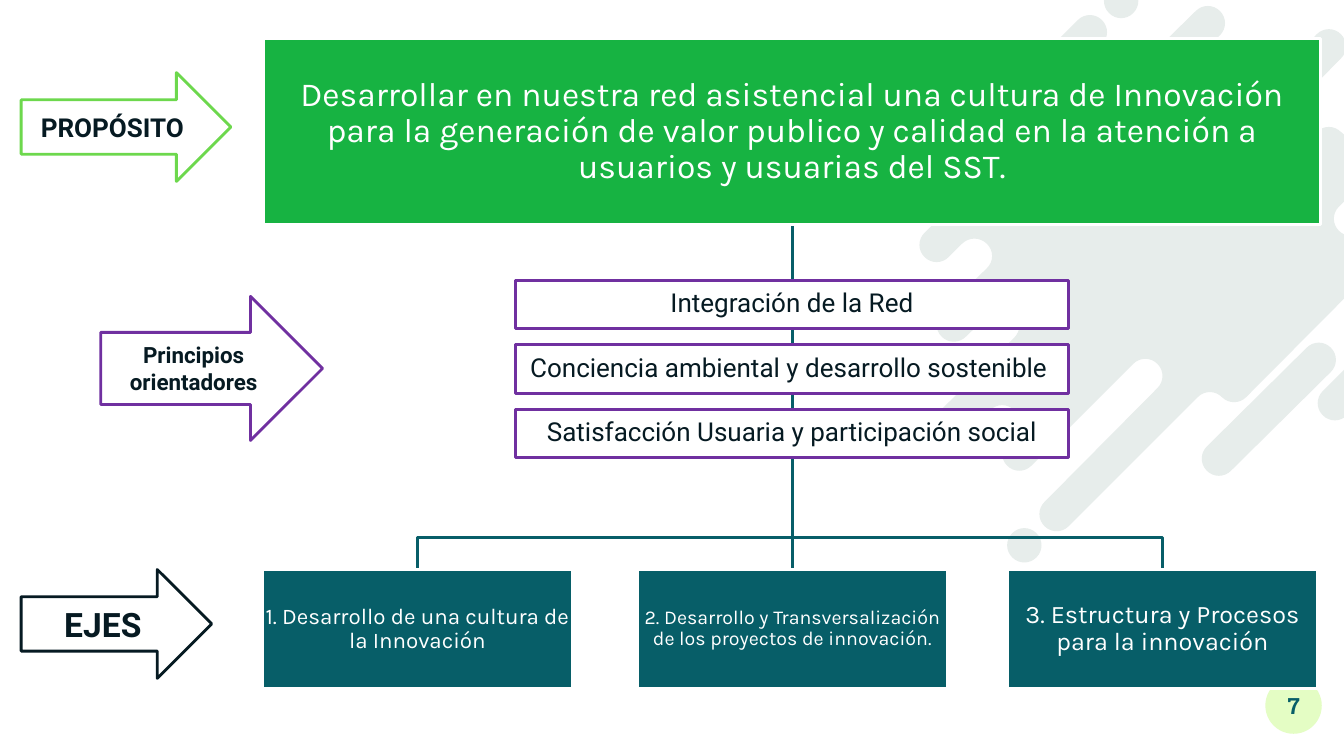
"""Build the slide that links purpose, guiding principles and axes of innovation."""
from dataclasses import dataclass

from lxml.etree import SubElement
from pptx import Presentation
from pptx.dml.color import RGBColor
from pptx.enum.shapes import MSO_SHAPE
from pptx.enum.text import MSO_ANCHOR, PP_ALIGN
from pptx.oxml.ns import qn
from pptx.util import Inches, Pt


@dataclass(frozen=True)
class Theme:
    white: str = "FFFFFF"
    ink: str = "061A22"
    teal: str = "075E68"
    green: str = "17B342"
    lime: str = "6DD84D"
    purple: str = "7030A0"
    badge: str = "E4FDC4"
    mist: str = "E7EDEB"
    display: str = "Karla"
    body: str = "Roboto"
    number: str = "Roboto Slab"
    large: float = 24
    medium: float = 18.6
    small: float = 16
    line: float = 2
    frame: float = 2.25


THEME = Theme()
WIDTH, HEIGHT = 13.33, 7.5

PURPOSE = ("Desarrollar en nuestra red asistencial una cultura de Innovación para la generación "
           "de valor publico y calidad en la atención a usuarios y usuarias del SST.")
PRINCIPLES = [
    "Integración de la Red",
    "Conciencia ambiental y desarrollo sostenible ",
    "Satisfacción Usuaria y participación social",
]
AXES = [
    ("1. Desarrollo de una cultura de la Innovación", 16, 4.14),
    ("2. Desarrollo y Transversalización de los proyectos de innovación.", 14, 7.86),
    ("3. Estructura y Procesos para la innovación", 18, 11.53),
]
ARROWS = [
    ("PROPÓSITO", THEME.medium, THEME.lime, (0.21, 0.72, 2.08, 1.08)),
    ("EJES", THEME.large, THEME.ink, (0.21, 5.65, 1.89, 1.08)),
    ("Principios orientadores", THEME.small, THEME.purple, (1, 2.94, 2.2, 1.43)),
]
PAGE_NUMBER = "7"

TRUNK = AXES[1][2]
PURPOSE_BOX = (2.61, 0.38, 10.49, 1.85)
PURPOSE_BOTTOM = 2.23
PRINCIPLE_LEFT, PRINCIPLE_TOP, PRINCIPLE_STEP = 5.11, 2.78, 0.64
PRINCIPLE_WIDTH, PRINCIPLE_HEIGHT = 5.49, 0.48
BRANCH, AXIS_TOP = 5.33, 5.65
AXIS_WIDTH, AXIS_HEIGHT = 3.07, 1.18
BADGE_BOX = (12.55, 6.72, 0.56, 0.56)

HALF_CAP = 0.12
ARC_HANDLE = 0.28
STREAKS = [
    (13.24, 4.0, 13.86, 3.38), (14.19, 0.9, 14.5, 0.59), (12.09, 4.55, 13.08, 3.57),
    (10.16, 5.41, 10.16, 5.41), (14.2, 3.03, 14.2, 3.03), (8.97, 3.71, 9.1, 3.58),
    (9.52, 1.61, 10.81, 0.32), (11.12, 0.01, 11.12, 0.01),
]
SPLASH = [
    (9.41, 2.55), (9.54, 2.42), (9.79, 2.42), (9.79, 2.66), (9.34, 3.1), (9.34, 3.34),
    (9.58, 3.34), (9.82, 3.11), (10.06, 3.11), (10.06, 3.35), (9.33, 4.07), (9.33, 4.31),
    (9.58, 4.31), (9.82, 4.07), (10.06, 4.07), (10.06, 4.31), (9.99, 4.38), (9.99, 4.62),
    (10.23, 4.62), (11.24, 3.61), (11.48, 3.61), (11.48, 3.85), (10.36, 4.98), (10.36, 5.22),
    (10.6, 5.22), (11.88, 3.94), (12.12, 3.94), (12.36, 3.94), (14.03, 2.26), (14.03, 2.02),
    (13.79, 2.02), (13.52, 2.29), (13.28, 2.29), (13.28, 2.05), (13.93, 1.4), (13.93, 1.16),
    (13.69, 1.16), (13.54, 1.31), (13.3, 1.31), (13.06, 1.31), (12.77, 1.6), (12.53, 1.6),
    (12.53, 1.36), (13.3, 0.58), (13.3, 0.34), (13.06, 0.34), (12.62, 0.79), (12.38, 0.79),
    (12.14, 0.79), (11.91, 1.02), (11.67, 1.02), (11.67, 0.78), (12.1, 0.35), (12.1, 0.11),
    (11.86, 0.11), (11.33, 0.63), (11.09, 0.63), (10.85, 0.63), (9.17, 2.31), (9.17, 2.55),
]


def color(value):
    return RGBColor.from_string(value)


def paint(shape, fill=None, line=None, width=THEME.line):
    shape.shadow.inherit = False
    if fill:
        shape.fill.solid()
        shape.fill.fore_color.rgb = color(fill)
    else:
        shape.fill.background()
    if line:
        shape.line.color.rgb = color(line)
        shape.line.width = Pt(width)
    else:
        shape.line.fill.background()


def write(shape, text, size, font, ink, bold=False, inset=0.01, spacing=0.9):
    frame = shape.text_frame
    frame.word_wrap = True
    frame.vertical_anchor = MSO_ANCHOR.MIDDLE
    frame.margin_left = frame.margin_right = Inches(inset)
    frame.margin_top = frame.margin_bottom = Inches(inset)
    para = frame.paragraphs[0]
    para.alignment = PP_ALIGN.CENTER
    para.line_spacing = spacing
    span = para.add_run()
    span.text = text
    span.font.size = Pt(size)
    span.font.name = font
    span.font.bold = bold
    span.font.color.rgb = color(ink)


def add_box(page, kind, place):
    return page.shapes.add_shape(kind, *(Inches(value) for value in place))


def add_outline(page, outlines, close):
    outlines = [[(Inches(x), Inches(y)) for x, y in outline] for outline in outlines]
    builder = page.shapes.build_freeform(*outlines[0][0])
    for index, outline in enumerate(outlines):
        if index:
            builder.move_to(*outline[0])
        builder.add_line_segments(outline[1:], close=close)
    return builder.convert_to_shape()


def streak_corners(left, low, right, high):
    h = HALF_CAP
    return [(right - h, high - h), (left - h, low - h), (left - h, low + h),
            (left + h, low + h), (right + h, high + h), (right + h, high - h)]


def round_corners(shape):
    """Turn every level or upright step into a quarter arc that follows the step before."""
    x = y = 0
    toward = [-1, 1]
    for step in list(shape._element.iter(qn("a:moveTo"), qn("a:lnTo"))):
        end = step[0]
        next_x, next_y = int(end.get("x")), int(end.get("y"))
        dx, dy = next_x - x, next_y - y
        chord = max(abs(dx), abs(dy))
        if step.tag == qn("a:moveTo"):
            toward = [-1, 1]
        elif min(abs(dx), abs(dy)) > Inches(0.03):
            toward = [1 if dx > 0 else -1, 1 if dy > 0 else -1]
        elif chord > Inches(0.03):
            bulge = 1 if abs(dx) > abs(dy) else 0
            step.remove(end)
            arc = SubElement(step.getparent(), qn("a:cubicBezTo"))
            step.getparent().replace(step, arc)
            for share in (ARC_HANDLE, 1 - ARC_HANDLE):
                handle = [x + dx * share, y + dy * share]
                handle[bulge] += toward[bulge] * chord * ARC_HANDLE
                SubElement(arc, qn("a:pt"), x=str(round(handle[0])), y=str(round(handle[1])))
            arc.append(end)
            toward[bulge] *= -1
        x, y = next_x, next_y


def main():
    deck = Presentation()
    deck.slide_width, deck.slide_height = Inches(WIDTH), Inches(HEIGHT)
    page = deck.slides.add_slide(deck.slide_layouts[6])

    badge = add_box(page, MSO_SHAPE.OVAL, BADGE_BOX)
    paint(badge, THEME.badge)
    write(badge, PAGE_NUMBER, THEME.small, THEME.number, THEME.teal, True, 0, 1)

    contours = [SPLASH] + [streak_corners(*streak) for streak in STREAKS]
    splash = add_outline(page, [contour + contour[:1] for contour in contours], True)
    round_corners(splash)
    paint(splash, THEME.mist)

    for _, _, center in reversed(AXES):
        bend = [] if center == TRUNK else [(TRUNK, BRANCH), (center, BRANCH)]
        branch = add_outline(page, [[(TRUNK, PURPOSE_BOTTOM), *bend, (center, AXIS_TOP)]], False)
        paint(branch, line=THEME.teal)

    purpose = add_box(page, MSO_SHAPE.RECTANGLE, PURPOSE_BOX)
    paint(purpose, THEME.green, THEME.white)
    write(purpose, PURPOSE, THEME.large, THEME.display, THEME.white, inset=0.02)

    for text, size, center in AXES:
        axis = add_box(page, MSO_SHAPE.RECTANGLE,
                       (center - AXIS_WIDTH / 2, AXIS_TOP, AXIS_WIDTH, AXIS_HEIGHT))
        paint(axis, THEME.teal, THEME.white)
        write(axis, text, size, THEME.display, THEME.white)

    for row, text in enumerate(PRINCIPLES):
        principle = add_box(page, MSO_SHAPE.RECTANGLE,
                            (PRINCIPLE_LEFT, PRINCIPLE_TOP + row * PRINCIPLE_STEP,
                             PRINCIPLE_WIDTH, PRINCIPLE_HEIGHT))
        paint(principle, THEME.white, THEME.purple, THEME.frame)
        write(principle, text, THEME.medium, THEME.body, THEME.ink)

    for text, size, line, place in ARROWS:
        arrow = add_box(page, MSO_SHAPE.RIGHT_ARROW, place)
        paint(arrow, THEME.white, line)
        write(arrow, text, size, THEME.body, THEME.ink, True, 0.05, 1)

    deck.save("out.pptx")


if __name__ == "__main__":
    main()
